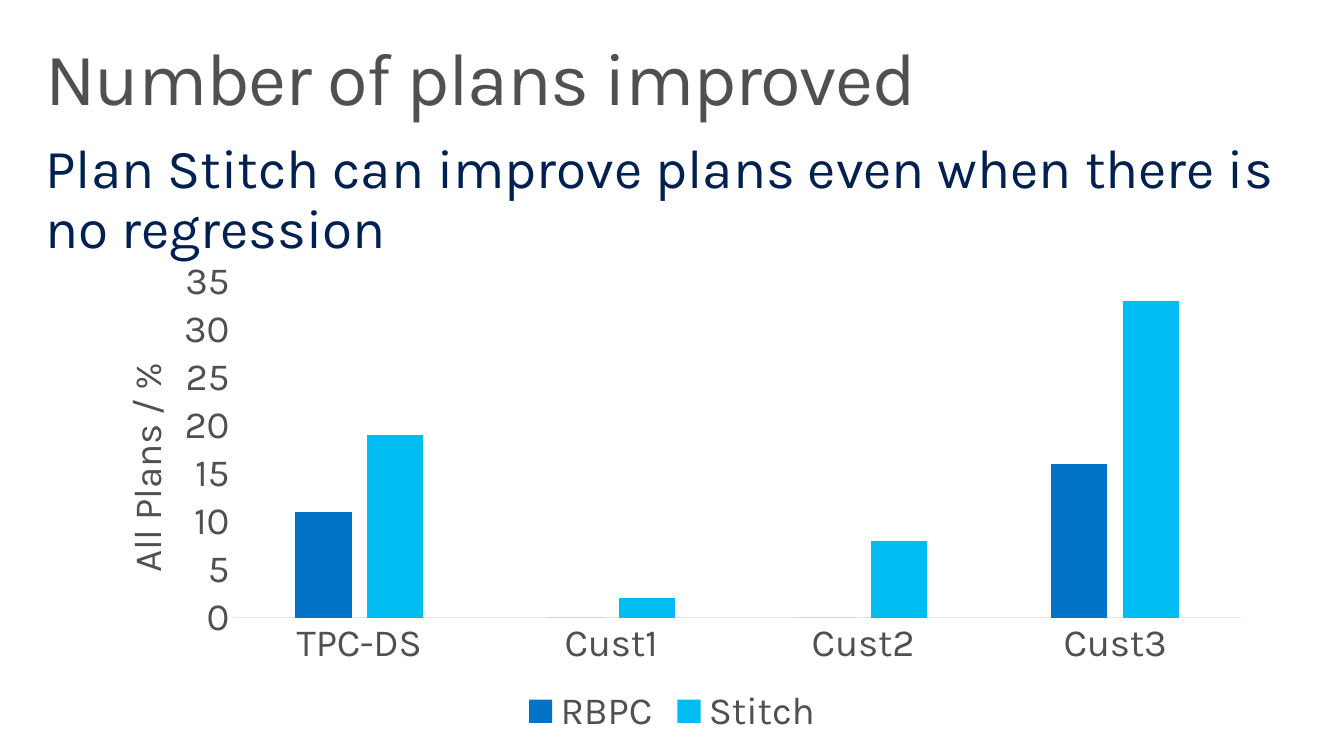
import pptx
import pptx.chart.data
import pptx.dml.color
import pptx.enum.chart
import pptx.enum.text
import pptx.oxml
import pptx.oxml.ns
import pptx.util
from pptx.util import Inches, Pt

FONT = "Karla"
GREY = "505050"
TITLE = "Number of plans improved"
MESSAGE = "Plan Stitch can improve plans even when there is no regression"
AXIS_TITLE = "All Plans / %"
CATEGORIES = ["TPC-DS", "Cust1", "Cust2", "Cust3"]
SERIES = [
    ("RBPC", [11, 0, 0, 16], "0072C6"),
    ("Stitch", [19, 2, 8, 33], "00BCF2"),
]
# Fractions of the chart's width and height
PLOT_LAYOUT = {"x": 0.13, "y": 0.07, "w": 0.85, "h": 0.68}
AXIS_TITLE_LAYOUT = {"x": 0.03, "y": 0.22}


def rgb(color):
    return pptx.dml.color.RGBColor.from_string(color)


def style_font(font, size, color):
    font.name = FONT
    font.size = Pt(size)
    font.bold = False
    font.color.rgb = rgb(color)


def fill_text(shape, box, text, size, color):
    shape.left, shape.top, shape.width, shape.height = map(Inches, box)
    frame = shape.text_frame
    frame.text = text
    frame.word_wrap = True
    frame.auto_size = pptx.enum.text.MSO_AUTO_SIZE.NONE
    frame.vertical_anchor = pptx.enum.text.MSO_ANCHOR.TOP
    frame.margin_left = frame.margin_right = Inches(0.16)
    frame.margin_top = frame.margin_bottom = Inches(0.1)
    paragraph = frame.paragraphs[0]
    paragraph.alignment = pptx.enum.text.PP_ALIGN.LEFT
    paragraph.line_spacing = 0.9
    paragraph.space_before = Pt(0)
    style_font(paragraph.runs[0].font, size, color)
    return paragraph.runs[0]


def place(element, before, layout, inner=False):
    """Give a chart part a manual layout, inserted ahead of the named child."""
    for old in element.findall(pptx.oxml.ns.qn("c:layout")):
        element.remove(old)
    target = '<c:layoutTarget val="inner"/>' if inner else ""
    modes = "".join(f'<c:{key}Mode val="edge"/>' for key in "xy")
    values = "".join(f'<c:{key} val="{value}"/>' for key, value in layout.items())
    node = pptx.oxml.parse_xml(
        f'<c:layout {pptx.oxml.ns.nsdecls("c")}><c:manualLayout>'
        f"{target}{modes}{values}</c:manualLayout></c:layout>")
    element.find(pptx.oxml.ns.qn(before)).addprevious(node)


def add_plan_chart(slide):
    data = pptx.chart.data.CategoryChartData()
    data.categories = CATEGORIES
    for name, values, _ in SERIES:
        data.add_series(name, values)
    chart = slide.shapes.add_chart(
        pptx.enum.chart.XL_CHART_TYPE.COLUMN_CLUSTERED,
        Inches(0.8), Inches(2.5), Inches(12), Inches(5), data).chart
    style_font(chart.font, 28, GREY)
    chart.has_title = False
    chart.has_legend = True
    chart.legend.position = pptx.enum.chart.XL_LEGEND_POSITION.BOTTOM
    chart.legend.include_in_layout = False
    style_font(chart.legend.font, 28, GREY)

    plot = chart.plots[0]
    plot.vary_by_categories = False
    plot.gap_width = 219
    plot.overlap = -27
    for series, (_, _, color) in zip(plot.series, SERIES):
        series.format.fill.solid()
        series.format.fill.fore_color.rgb = rgb(color)

    category_axis, value_axis = chart.category_axis, chart.value_axis
    for axis in (category_axis, value_axis):
        axis.has_major_gridlines = False
        axis.major_tick_mark = pptx.enum.chart.XL_TICK_MARK.NONE
        axis.minor_tick_mark = pptx.enum.chart.XL_TICK_MARK.NONE
        style_font(axis.tick_labels.font, 28, GREY)
    category_axis.format.line.color.rgb = rgb("E5E5E5")
    category_axis.format.line.width = Pt(0.75)
    value_axis.format.line.fill.background()
    value_axis.minimum_scale = 0
    value_axis.maximum_scale = 35
    value_axis.major_unit = 5

    title_frame = value_axis.axis_title.text_frame
    title_frame.text = AXIS_TITLE
    style_font(title_frame.paragraphs[0].runs[0].font, 28, GREY)
    body = title_frame._txBody.bodyPr
    body.set("rot", "-5400000")
    body.set("vert", "horz")
    place(value_axis.axis_title._element, "c:overlay", AXIS_TITLE_LAYOUT)
    plot_area = chart._chartSpace.chart.plotArea
    place(plot_area, "c:barChart", PLOT_LAYOUT, inner=True)


def main():
    presentation = pptx.Presentation()
    presentation.slide_width = Inches(13.6)
    presentation.slide_height = Inches(7.65)
    slide = presentation.slides.add_slide(presentation.slide_layouts[5])
    title_run = fill_text(slide.shapes.title, (0.3, 0.32, 13, 1), TITLE, 54, GREY)
    title_run._r.get_or_add_rPr().set("spc", "-100")
    message = slide.shapes.add_textbox(0, 0, 0, 0)
    fill_text(message, (0.3, 1.33, 13, 2.15), MESSAGE, 40, "002050")
    add_plan_chart(slide)
    presentation.save("out.pptx")


if __name__ == "__main__":
    main()
